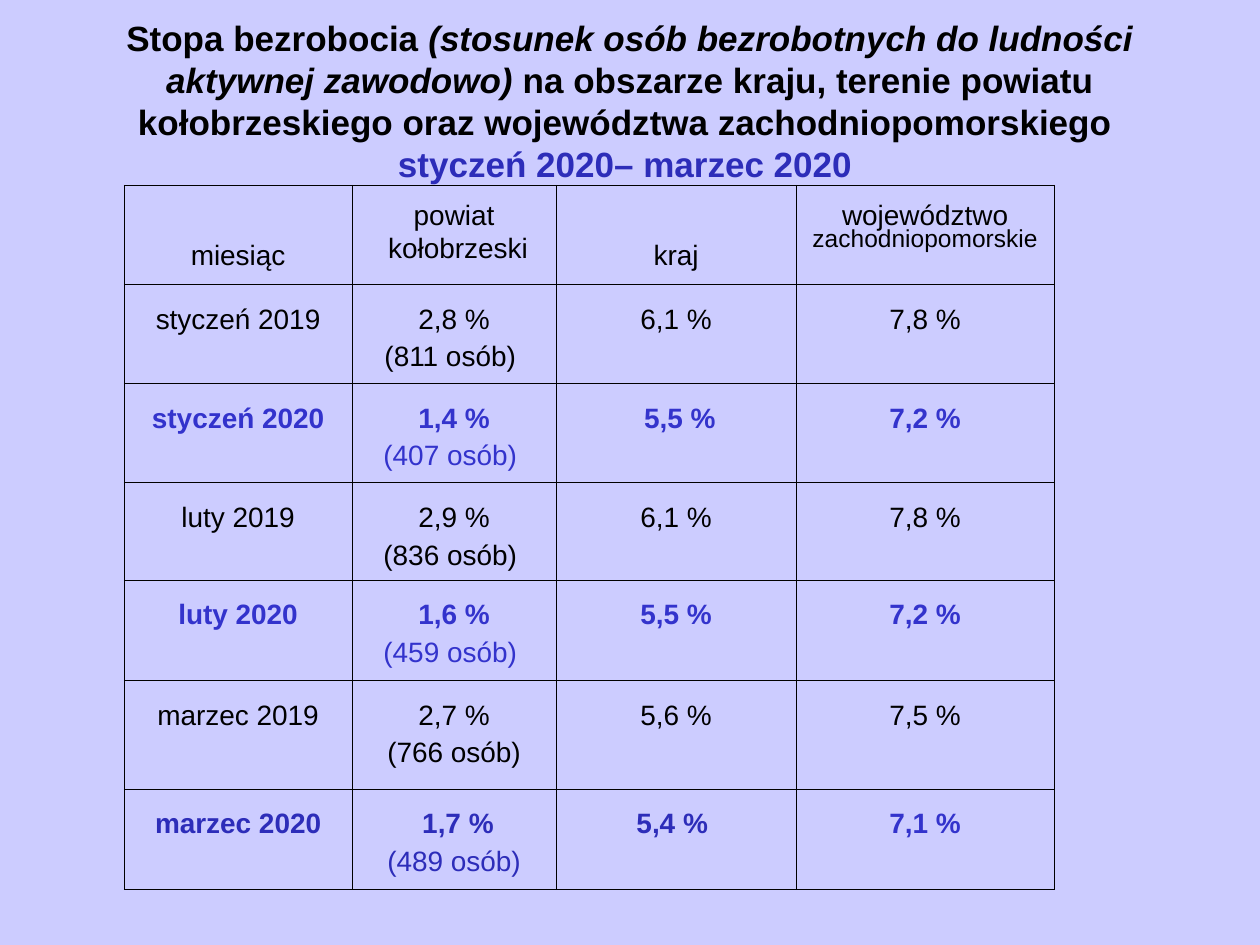
from lxml.etree import SubElement
from pptx import Presentation
from pptx.dml.color import RGBColor
from pptx.enum.text import MSO_ANCHOR, PP_ALIGN
from pptx.oxml.ns import qn
from pptx.util import Cm, Pt

BLACK, BLUE, NAVY = "000000", "3333CC", "2D2DB9"

# Title runs: text, italic, colour; None breaks the line
TITLE = [
    ("Stopa bezrobocia ", False, BLACK),
    ("(stosunek osób bezrobotnych do ludności aktywnej zawodowo)", True, BLACK),
    (" na obszarze kraju, terenie powiatu kołobrzeskiego"
     " oraz województwa zachodniopomorskiego ", False, BLACK),
    None,
    ("styczeń 2020– marzec 2020 ", False, NAVY),
]

# Table text: one line of a cell is one paragraph
HEAD = ["miesiąc", "powiat\n kołobrzeski", "kraj", "województwo "]
REGION = "zachodniopomorskie"
ROWS = [
    ["styczeń 2019", "2,8 %\n(811 osób) ", "6,1 %", "7,8 %"],
    ["styczeń 2020", "1,4 %\n(407 osób) ", " 5,5 %", "7,2 %"],
    ["luty 2019", "2,9 %\n(836 osób) ", "6,1 %", "7,8 %"],
    ["luty 2020", "1,6 %\n(459 osób) ", "5,5 %", "7,2 %"],
    ["marzec 2019", "2,7 %\n(766 osób)", "5,6 %", "7,5 %"],
    ["marzec 2020", " 1,7 %\n(489 osób)", "5,4 % ", "7,1 %"],
]
WIDTHS = [4.6, 4.11, 4.84, 5.2]
HEIGHTS = [2, 2, 2, 1.96, 2.03, 2.18, 2.03]


def color(code):
    return RGBColor.from_string(code)


def style(run, size, code, bold=False, italic=False):
    font = run.font
    font.name, font.size = "Arial", Pt(size)
    font.bold, font.italic = bold, italic
    font.color.rgb = color(code)


def border(cell):
    props = cell._tc.get_or_add_tcPr()
    for spot, side in enumerate(("a:lnL", "a:lnR", "a:lnT", "a:lnB")):
        line = props.makeelement(qn(side), {"w": str(Pt(0.25))})
        fill = SubElement(line, qn("a:solidFill"))
        SubElement(fill, qn("a:srgbClr"), val=BLACK)
        props.insert(spot, line)


def write(cell, text, top, gap, code=BLACK, bold=False):
    cell.text_frame.text = text
    cell.fill.background()
    cell.vertical_anchor = MSO_ANCHOR.TOP
    cell.margin_left = cell.margin_right = Cm(0.25)
    cell.margin_top, cell.margin_bottom = Cm(top), Cm(0)
    for row, para in enumerate(cell.text_frame.paragraphs):
        para.alignment = PP_ALIGN.CENTER
        para.line_spacing, para.space_before = 0.81, Pt(gap)
        for run in para.runs:
            style(run, 16, code, bold and row == 0)
    border(cell)


# Slide
deck = Presentation()
deck.slide_width, deck.slide_height = Cm(25.4), Cm(19.05)
slide = deck.slides.add_slide(deck.slide_layouts[6])
slide.background.fill.solid()
slide.background.fill.fore_color.rgb = color("CCCCFF")

# Title
box = slide.shapes.add_textbox(Cm(1.27), Cm(0.33), Cm(22.86), Cm(3.4))
frame = box.text_frame
frame.word_wrap = True
frame.vertical_anchor = MSO_ANCHOR.MIDDLE
para = frame.paragraphs[0]
para.alignment = PP_ALIGN.CENTER
for part in TITLE:
    if part is None:
        para.add_line_break()
        continue
    text, italic, code = part
    run = para.add_run()
    run.text = text
    style(run, 20, code, True, italic)

# Table grid
table = slide.shapes.add_table(
    len(HEIGHTS), len(WIDTHS), Cm(2.5), Cm(3.73),
    Cm(sum(WIDTHS)), Cm(sum(HEIGHTS))).table
table.first_row = table.horz_banding = False
for col, width in zip(table.columns, WIDTHS):
    col.width = Cm(width)
for row, height in zip(table.rows, HEIGHTS):
    row.height = Cm(height)

# Header: the short labels sit one line lower
for col, text in enumerate(HEAD):
    write(table.cell(0, col), text, 1.21 if col in (0, 2) else 0.4, 5)
run = table.cell(0, 3).text_frame.paragraphs[0].add_run()
run.text = REGION
style(run, 14, BLACK)

# Months: each 2020 row is blue and bold, the latest one darker
for row, texts in enumerate(ROWS, 1):
    new = "2020" in texts[0]
    for col, text in enumerate(texts):
        dark = row == len(ROWS) and col < 3
        code = (NAVY if dark else BLUE) if new else BLACK
        write(table.cell(row, col), text, 0.5, 7, code, new)

deck.save("out.pptx")
